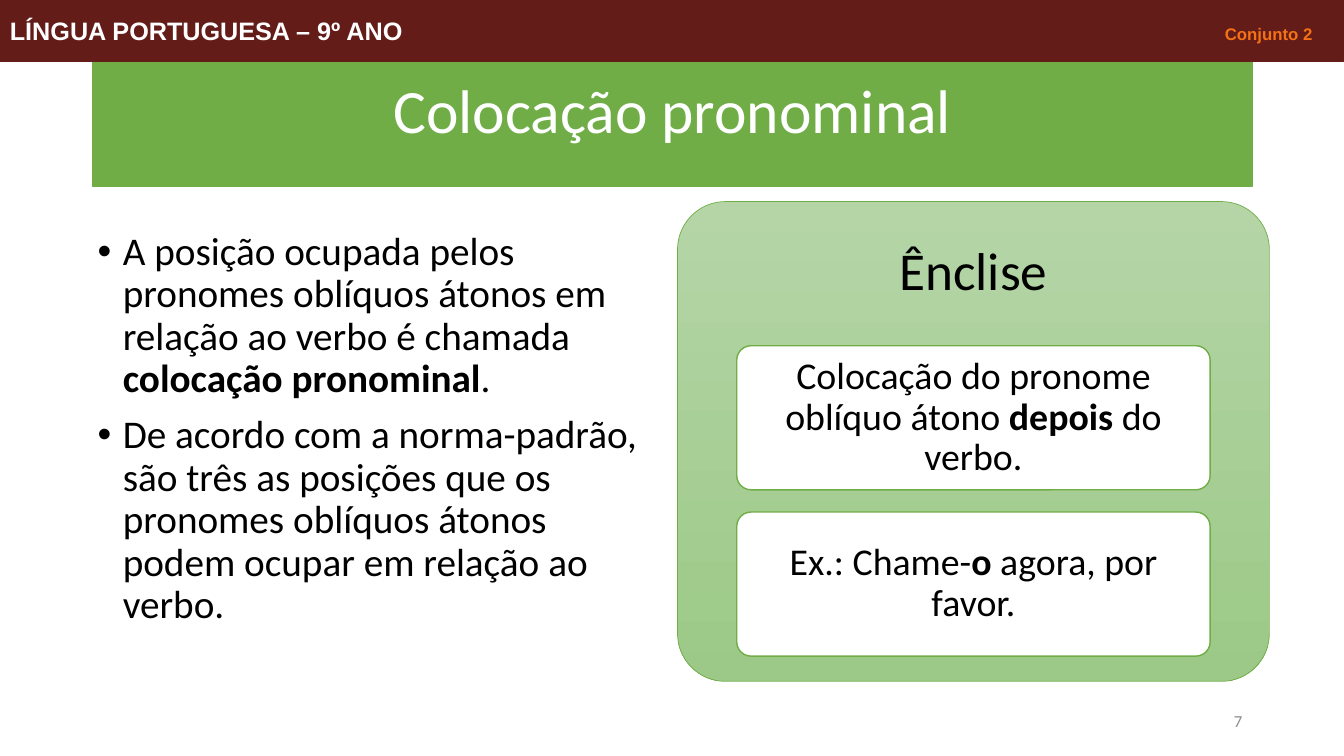
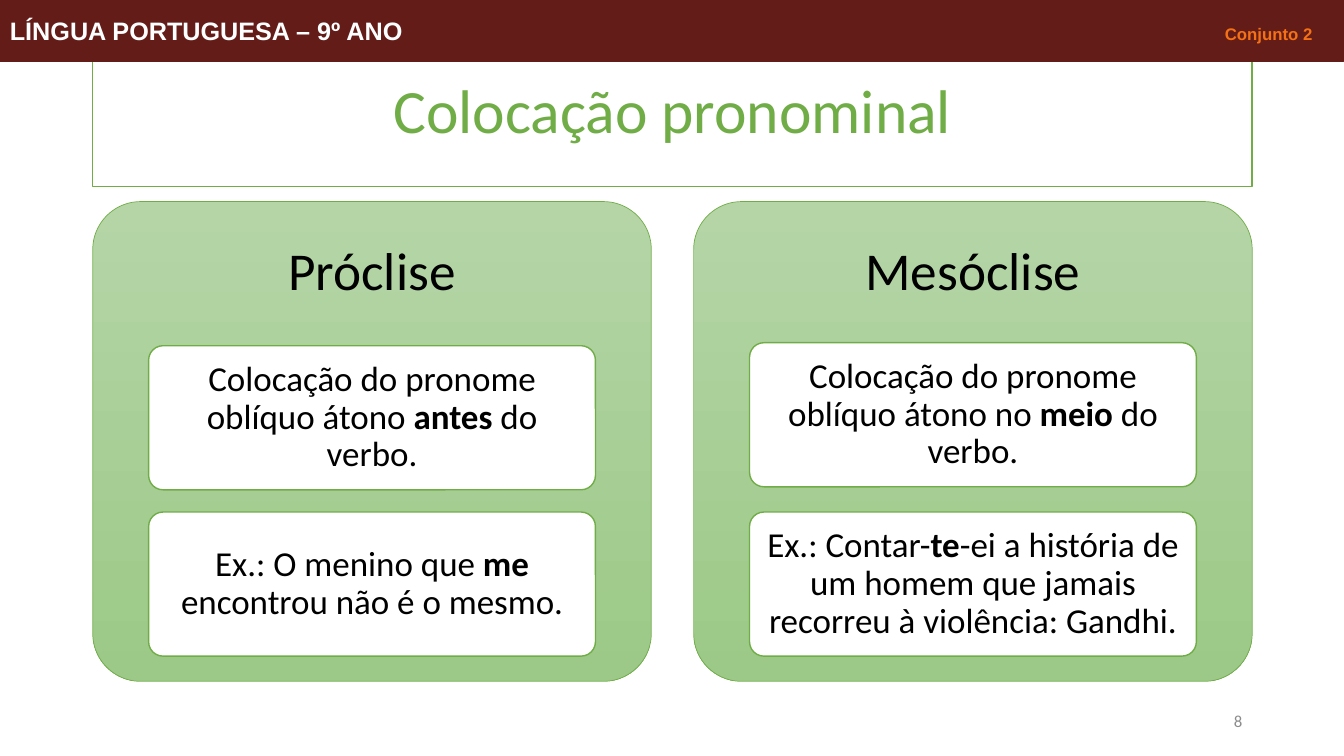
from lxml.etree import SubElement
from pptx import Presentation
from pptx.dml.color import RGBColor
from pptx.enum.shapes import MSO_SHAPE
from pptx.enum.text import MSO_ANCHOR, PP_ALIGN
from pptx.oxml.ns import qn
from pptx.util import Inches, Pt

COLORS = {
    "green": "70AD47",
    "card_top": "B5D5A7",
    "card_bottom": "9CC987",
    "band": "631C18",
    "orange": "F47116",
    "gray": "8C8C8C",
    "white": "FFFFFF",
    "black": "000000",
}
FONT = "Calibri"
BAND_FONT = "Arial"
SLIDE_WIDTH = 13.33
MARGIN = 0.92
CONTENT_WIDTH = 11.5
CARD_TOP, CARD_HEIGHT = 2, 4.76
HEADING_HEIGHT = 1.43
DETAIL_HEIGHT = 1.43
DEFINITION_TOP, EXAMPLE_TOP = 3.43, 5.08


def rgb(color):
    return RGBColor.from_string(COLORS[color])


def add_panel(slide, preset, box, fill, line, line_width):
    panel = slide.shapes.add_shape(preset, *map(Inches, box))
    panel.shadow.inherit = False
    if fill:
        panel.fill.solid()
        panel.fill.fore_color.rgb = rgb(fill)
    panel.line.color.rgb = rgb(line)
    panel.line.width = Pt(line_width)
    return panel


def set_frame(frame, anchor=MSO_ANCHOR.MIDDLE, inset=(0.1, 0.05)):
    frame.word_wrap = True
    frame.vertical_anchor = anchor
    frame.margin_left = frame.margin_right = Inches(inset[0])
    frame.margin_top = frame.margin_bottom = Inches(inset[1])
    return frame


def style_run(run, size, color, bold=False, font=FONT):
    run.font.name = font
    run.font.size = Pt(size)
    run.font.bold = bold
    run.font.color.rgb = rgb(color)


def write_pieces(paragraph, pieces, size, color="black",
                 align=PP_ALIGN.CENTER, spacing=0.9):
    """Pieces alternate between regular and bold text."""
    paragraph.alignment = align
    paragraph.line_spacing = spacing
    for index, piece in enumerate(pieces):
        run = paragraph.add_run()
        run.text = piece
        style_run(run, size, color, bold=index % 2 == 1)


def add_text(slide, box, **frame_options):
    area = slide.shapes.add_textbox(*map(Inches, box))
    return set_frame(area.text_frame, **frame_options)


def add_title(slide, text, fill, color):
    title = add_panel(slide, MSO_SHAPE.RECTANGLE,
                      (MARGIN, 0.4, CONTENT_WIDTH, 1.45), fill, "green", 1)
    frame = set_frame(title.text_frame)
    write_pieces(frame.paragraphs[0], [text], 44, color)


def add_band(slide):
    band = add_panel(slide, MSO_SHAPE.RECTANGLE,
                     (0, 0, SLIDE_WIDTH, 0.61), "band", "band", 0.75)
    paragraph = set_frame(band.text_frame).paragraphs[0]
    paragraph.alignment = PP_ALIGN.LEFT
    tabs = SubElement(paragraph._p.get_or_add_pPr(), qn("a:tabLst"))
    SubElement(tabs, qn("a:tab"), pos=str(Inches(12.92)), algn="r")
    for text, size, color in (("LÍNGUA PORTUGUESA – 9º ANO\t", 18, "white"),
                              ("Conjunto 2", 12, "orange")):
        run = paragraph.add_run()
        run.text = text
        style_run(run, size, color, bold=True, font=BAND_FONT)


def add_page_number(slide, number):
    frame = add_text(slide, (9.42, 6.95, 3, 0.4))
    write_pieces(frame.paragraphs[0], [str(number)], 12, "gray",
                 PP_ALIGN.RIGHT, 1)


def add_bullets(slide, box, items):
    frame = add_text(slide, box, anchor=MSO_ANCHOR.TOP)
    for index, pieces in enumerate(items):
        paragraph = frame.add_paragraph() if index else frame.paragraphs[0]
        write_pieces(paragraph, pieces, 28, align=PP_ALIGN.LEFT)
        paragraph.space_before = Pt(10)
        properties = paragraph._p.get_or_add_pPr()
        properties.set("marL", str(Inches(0.25)))
        properties.set("indent", str(-Inches(0.25)))
        SubElement(properties, qn("a:buFont"), typeface="Arial")
        SubElement(properties, qn("a:buChar"), char="•")


def add_detail(slide, box, pieces, size):
    detail = add_panel(slide, MSO_SHAPE.ROUNDED_RECTANGLE, box,
                       "white", "green", 1)
    detail.adjustments[0] = 0.1
    frame = set_frame(detail.text_frame, inset=(0.07, 0.05))
    write_pieces(frame.paragraphs[0], pieces, size)


def add_card(slide, left, width, heading, definition, example, size,
             definition_top=DEFINITION_TOP):
    card = add_panel(slide, MSO_SHAPE.ROUNDED_RECTANGLE,
                     (left, CARD_TOP, width, CARD_HEIGHT), None, "green", 0.5)
    card.adjustments[0] = 0.1
    card.fill.gradient()
    card.fill.gradient_angle = 270
    for stop, color in zip(card.fill.gradient_stops,
                           ("card_top", "card_bottom")):
        stop.color.rgb = rgb(color)
    frame = add_text(slide, (left, CARD_TOP, width, HEADING_HEIGHT),
                     inset=(0.16, 0.16))
    write_pieces(frame.paragraphs[0], [heading], 38)
    for top, pieces in ((definition_top, definition), (EXAMPLE_TOP, example)):
        add_detail(slide, (left + width * 0.1, top, width * 0.8,
                           DETAIL_HEIGHT), pieces, size)


def start_slide(deck, title_fill, title_color, number):
    slide = deck.slides.add_slide(deck.slide_layouts[6])
    add_title(slide, "Colocação pronominal", title_fill, title_color)
    add_band(slide)
    add_page_number(slide, number)
    return slide


def main():
    deck = Presentation()
    deck.slide_width = Inches(SLIDE_WIDTH)
    deck.slide_height = Inches(7.5)

    enclisis = start_slide(deck, "green", "white", 7)
    add_bullets(enclisis, (0.87, 2.25, 5.57, 4.84), [
        ["A posição ocupada pelos pronomes oblíquos átonos em relação ao "
         "verbo é chamada ", "colocação pronominal", "."],
        ["De acordo com a norma-padrão, são três as posições que os pronomes "
         "oblíquos átonos podem ocupar em relação ao verbo."],
    ])
    add_card(enclisis, 6.72, 5.87, "Ênclise",
             ["Colocação do pronome oblíquo átono ", "depois", " do verbo."],
             ["Ex.: Chame-", "o", " agora, por favor."], 27)

    other_positions = start_slide(deck, "white", "green", 8)
    card_width = 5.54
    add_card(other_positions, MARGIN, card_width, "Próclise",
             ["Colocação do pronome oblíquo átono ", "antes", " do verbo."],
             ["Ex.: O menino que ", "me", " encontrou não é o mesmo."], 25)
    add_card(other_positions, MARGIN + CONTENT_WIDTH - card_width, card_width,
             "Mesóclise",
             ["Colocação do pronome oblíquo átono no ", "meio", " do verbo."],
             ["Ex.: Contar-", "te", "-ei a história de um homem que jamais "
              "recorreu à violência: Gandhi."], 25, definition_top=3.4)

    deck.save("out.pptx")


if __name__ == "__main__":
    main()
